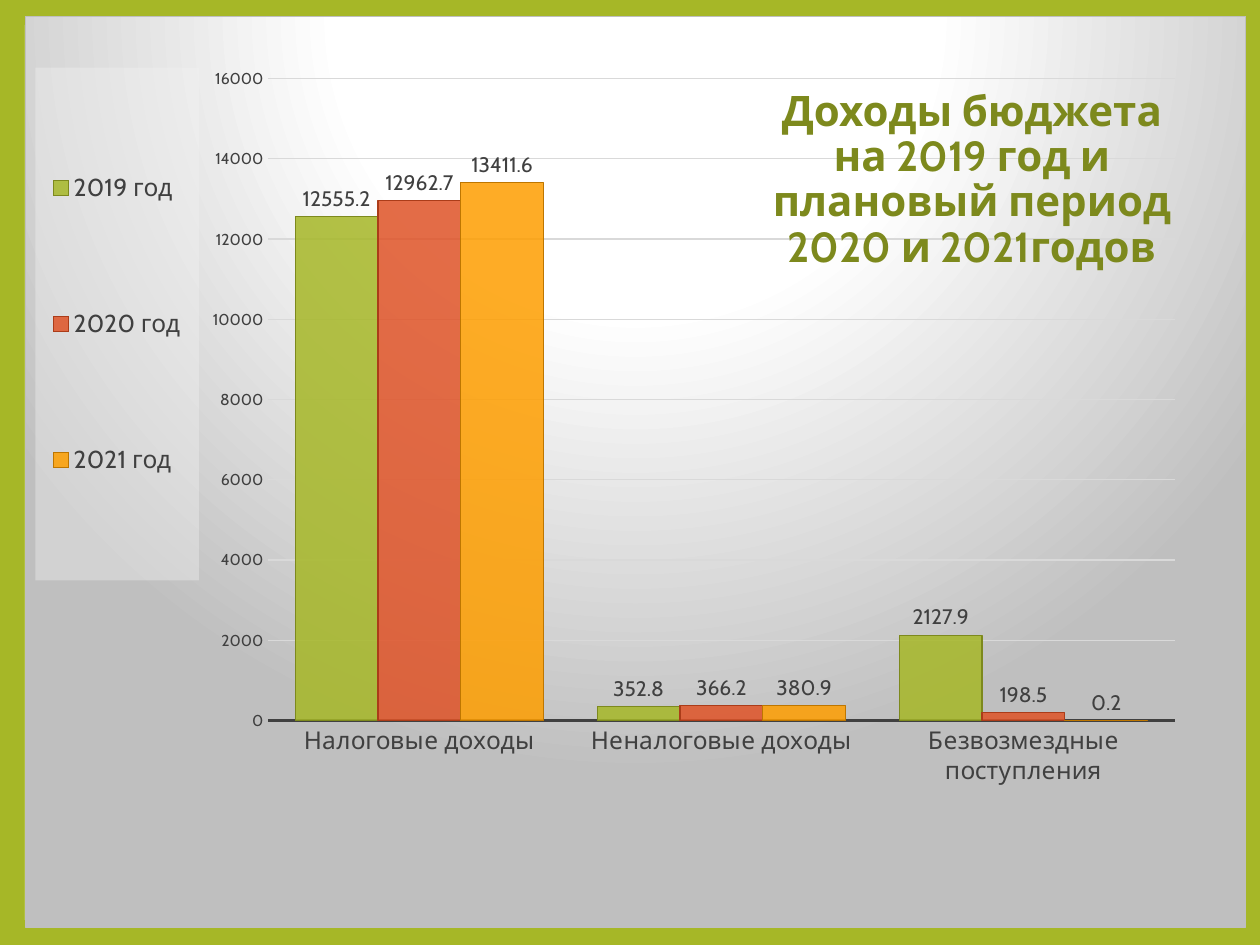
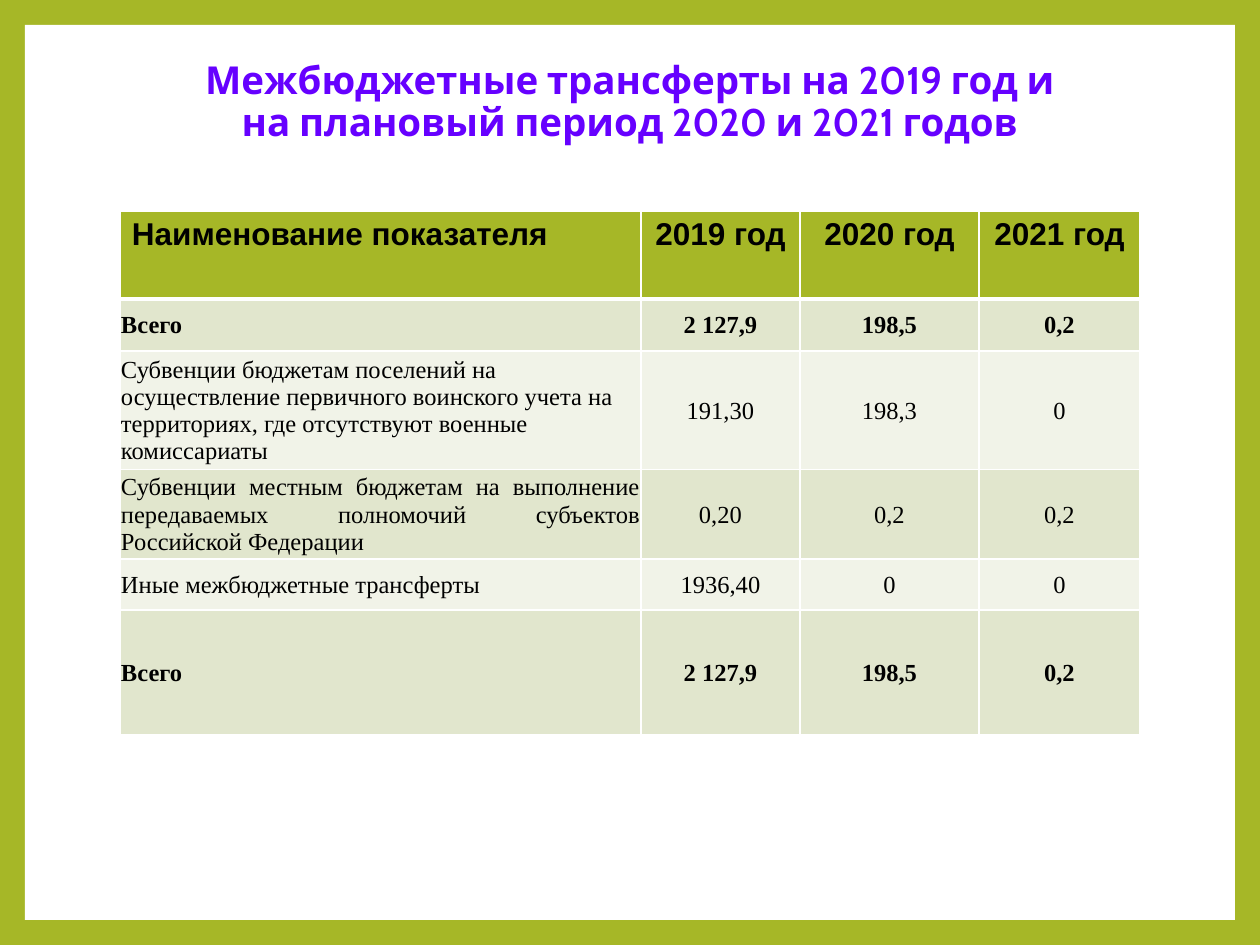
from lxml.etree import fromstring, SubElement
from pptx import Presentation
from pptx.chart.data import CategoryChartData
from pptx.dml.color import RGBColor
from pptx.enum.chart import XL_CHART_TYPE, XL_LABEL_POSITION, XL_LEGEND_POSITION, XL_TICK_MARK
from pptx.enum.shapes import MSO_SHAPE
from pptx.enum.text import MSO_ANCHOR, PP_ALIGN
from pptx.oxml.ns import nsdecls, qn
from pptx.util import Emu, Pt

SCALE = 914400 / 126
INK = {
    "green": "A6B727", "olive": "7D891D", "red": "DF5327", "rust": "AB3C19",
    "gold": "FE9E00", "brown": "BE7600", "violet": "6600FF", "white": "FFFFFF",
    "black": "000000", "text": "404040", "grid": "D9D9D9", "edge": "BFBFBF",
    "mist": "F2F2F2", "band": "E1E6CD", "pale": "F1F3E8",
}
HEAD, SANS, SERIF = "Cabin", "Arial", "Times New Roman"
LEFT, MID, FULL = PP_ALIGN.LEFT, PP_ALIGN.CENTER, PP_ALIGN.JUSTIFY

GROUPS = ["Налоговые доходы", "Неналоговые доходы", "Безвозмездные поступления"]
YEARS = [
    ("2019 год", [12555.2, 352.8, 2127.9], "green", "olive"),
    ("2020 год", [12962.7, 366.2, 198.5], "red", "rust"),
    ("2021 год", [13411.6, 380.9, 0.2], "gold", "brown"),
]
TOTAL = ["Всего", "2 127,9", "198,5", "0,2"]
ROWS = [
    (88, LEFT, ["Наименование показателя"] + [year[0] for year in YEARS]),
    (52, LEFT, TOTAL),
    (110, LEFT, ["Субвенции бюджетам поселений на осуществление первичного воинского учета "
                 "на территориях, где отсутствуют военные комиссариаты", "191,30", "198,3", "0"]),
    (82, FULL, ["Субвенции местным бюджетам на выполнение передаваемых полномочий "
                "субъектов Российской Федерации", "0,20", "0,2", "0,2"]),
    (51, FULL, ["Иные межбюджетные трансферты", "1936,40", "0", "0"]),
    (125, LEFT, TOTAL),
]
COLS = [521, 159, 179, 161]


def px(num):
    return Emu(round(num * SCALE))


def rgb(name):
    return RGBColor.from_string(INK[name])


def style(font, size, face=HEAD, ink="text", bold=False):
    font.size, font.name, font.bold = Pt(size), face, bold
    font.color.rgb = rgb(ink)


def write(host, text, align=MID, anchor=MSO_ANCHOR.MIDDLE, inset=(12, 6, 12, 6), lead=None, **look):
    host.vertical_anchor = anchor
    host.margin_left, host.margin_top, host.margin_right, host.margin_bottom = map(px, inset)
    para = getattr(host, "text_frame", host).paragraphs[0]
    para.text, para.alignment, para.line_spacing = text, align, lead
    for run in para.runs:
        style(run.font, **look)


def base(deck):
    slide = deck.slides.add_slide(deck.slide_layouts[6])
    fill = slide.background.fill
    fill.solid()
    fill.fore_color.rgb = rgb("green")
    panel = slide.shapes.add_shape(MSO_SHAPE.RECTANGLE, *map(px, (25, 25, 1210, 895)))
    panel.shadow.inherit = False
    panel.fill.solid()
    panel.fill.fore_color.rgb = rgb("white")
    panel.line.fill.background()
    return slide


def title(slide, box, text, size, ink):
    frame = slide.shapes.add_textbox(*map(px, box)).text_frame
    frame.word_wrap = True
    write(frame, text, size=size, ink=ink, bold=True, lead=0.9)


def place(x, y, wide, high, inner=""):
    spots = zip("xywh", (x, y, wide, high))
    modes = '<c:xMode val="edge"/><c:yMode val="edge"/>'
    vals = "".join(f'<c:{key} val="{val}"/>' for key, val in spots)
    return fromstring(f'<c:layout {nsdecls("c")}><c:manualLayout>{inner}{modes}{vals}'
                      '</c:manualLayout></c:layout>')


def skin(body):
    return fromstring(f'<c:spPr {nsdecls("c", "a")}>{body}</c:spPr>')


def drop(root):
    for old in root.findall(qn("c:layout")):
        root.remove(old)


def canvas(chart):
    stops = "".join(f'<a:gs pos="{pos}"><a:srgbClr val="{INK[ink]}"/></a:gs>'
                    for pos, ink in ((0, "white"), (39000, "white"), (100000, "edge")))
    root = chart._chartSpace.find(qn("c:chart"))
    root.addnext(skin(
        f'<a:gradFill><a:gsLst>{stops}</a:gsLst><a:path path="circle">'
        '<a:fillToRect l="50000" t="-80000" r="50000" b="180000"/></a:path></a:gradFill>'
        f'<a:ln w="9525"><a:solidFill><a:srgbClr val="{INK["edge"]}"/></a:solidFill></a:ln>'))
    plot = root.find(qn("c:plotArea"))
    drop(plot)
    plot.insert(0, place(0.199, 0.068, 0.743, 0.705, '<c:layoutTarget val="inner"/>'))


def legend(chart):
    chart.has_legend = True
    key = chart.legend
    key.position, key.include_layout = XL_LEGEND_POSITION.LEFT, False
    style(key.font, 14)
    root = key._element
    drop(root)
    root.find(qn("c:legendPos")).addnext(place(0.008, 0.056, 0.134, 0.563))
    root.find(qn("c:txPr")).addprevious(skin(
        f'<a:solidFill><a:srgbClr val="{INK["mist"]}"><a:alpha val="39000"/>'
        '</a:srgbClr></a:solidFill>'))


def axes(chart):
    for axis, size in ((chart.category_axis, 14), (chart.value_axis, 9)):
        axis.major_tick_mark = axis.minor_tick_mark = XL_TICK_MARK.NONE
        style(axis.tick_labels.font, size)
    line = chart.category_axis.format.line
    line.width, line.color.rgb = Pt(1.5), rgb("text")
    scale = chart.value_axis
    scale.minimum_scale, scale.maximum_scale, scale.major_unit = 0, 16000, 2000
    scale.format.line.fill.background()
    grid = scale.major_gridlines.format.line
    grid.width, grid.color.rgb = Pt(0.75), rgb("grid")


def bars(chart):
    plot = chart.plots[0]
    plot.gap_width, plot.overlap, plot.vary_by_categories = 65, 0, False
    for item, (_, _, ink, edge) in zip(plot.series, YEARS):
        look = item.format
        look.fill.solid()
        look.fill.fore_color.rgb = rgb(ink)
        tint = item._element.find(".//" + qn("a:srgbClr"))
        SubElement(tint, qn("a:alpha"), val="85000")
        look.line.width, look.line.color.rgb = Pt(0.75), rgb(edge)
        tags = item.data_labels
        tags.show_value, tags.position = True, XL_LABEL_POSITION.OUTSIDE_END
        style(tags.font, 12)


def graph(slide, box):
    data = CategoryChartData()
    data.categories = GROUPS
    for name, vals, _, _ in YEARS:
        data.add_series(name, vals)
    chart = slide.shapes.add_chart(XL_CHART_TYPE.COLUMN_CLUSTERED, *map(px, box), data).chart
    chart.has_title = False
    style(chart.font, 10, ink="black")
    canvas(chart)
    legend(chart)
    axes(chart)
    bars(chart)


def border(cell, head):
    props = cell._tc.get_or_add_tcPr()
    for spot, side in enumerate("LRTB"):
        width = Pt(3 if head and side == "B" else 1)
        props.insert(spot, fromstring(
            f'<a:ln{side} {nsdecls("a")} w="{width}"><a:solidFill>'
            f'<a:srgbClr val="{INK["white"]}"/></a:solidFill></a:ln{side}>'))


def table(slide, left, top):
    high = sum(row[0] for row in ROWS)
    box = map(px, (left, top, sum(COLS), high))
    grid = slide.shapes.add_table(len(ROWS), len(COLS), *box).table
    grid.first_row = grid.horz_banding = False
    for col, wide in zip(grid.columns, COLS):
        col.width = px(wide)
    for row, (tall, align, texts) in enumerate(ROWS):
        grid.rows[row].height = px(tall)
        head = row == 0
        shade = "green" if head else "band" if row % 2 else "pale"
        if head:
            look = dict(size=18, face=SANS, bold=True, anchor=MSO_ANCHOR.TOP)
        else:
            look = dict(size=14, face=SERIF, bold=texts is TOTAL, inset=(1, 1, 1, 0))
        for col, text in enumerate(texts):
            cell = grid.cell(row, col)
            cell.fill.solid()
            cell.fill.fore_color.rgb = rgb(shade)
            border(cell, head)
            write(cell, text, align=MID if col else align, ink="black", **look)


def income(deck):
    slide = base(deck)
    graph(slide, (25, 16, 1221, 912))
    title(slide, (758, 65, 428, 231),
          "Доходы бюджета на 2019 год и\vплановый период 2020 и 2021годов", 24, "olive")


def grants(deck):
    slide = base(deck)
    title(slide, (63, 38, 1134, 130),
          "Межбюджетные трансферты на 2019 год и\vна плановый период 2020 и 2021 годов",
          22, "violet")
    table(slide, 120, 211)


def main():
    deck = Presentation()
    deck.slide_width, deck.slide_height = px(1260), px(945)
    income(deck)
    grants(deck)
    deck.save("out.pptx")


if __name__ == "__main__":
    main()
